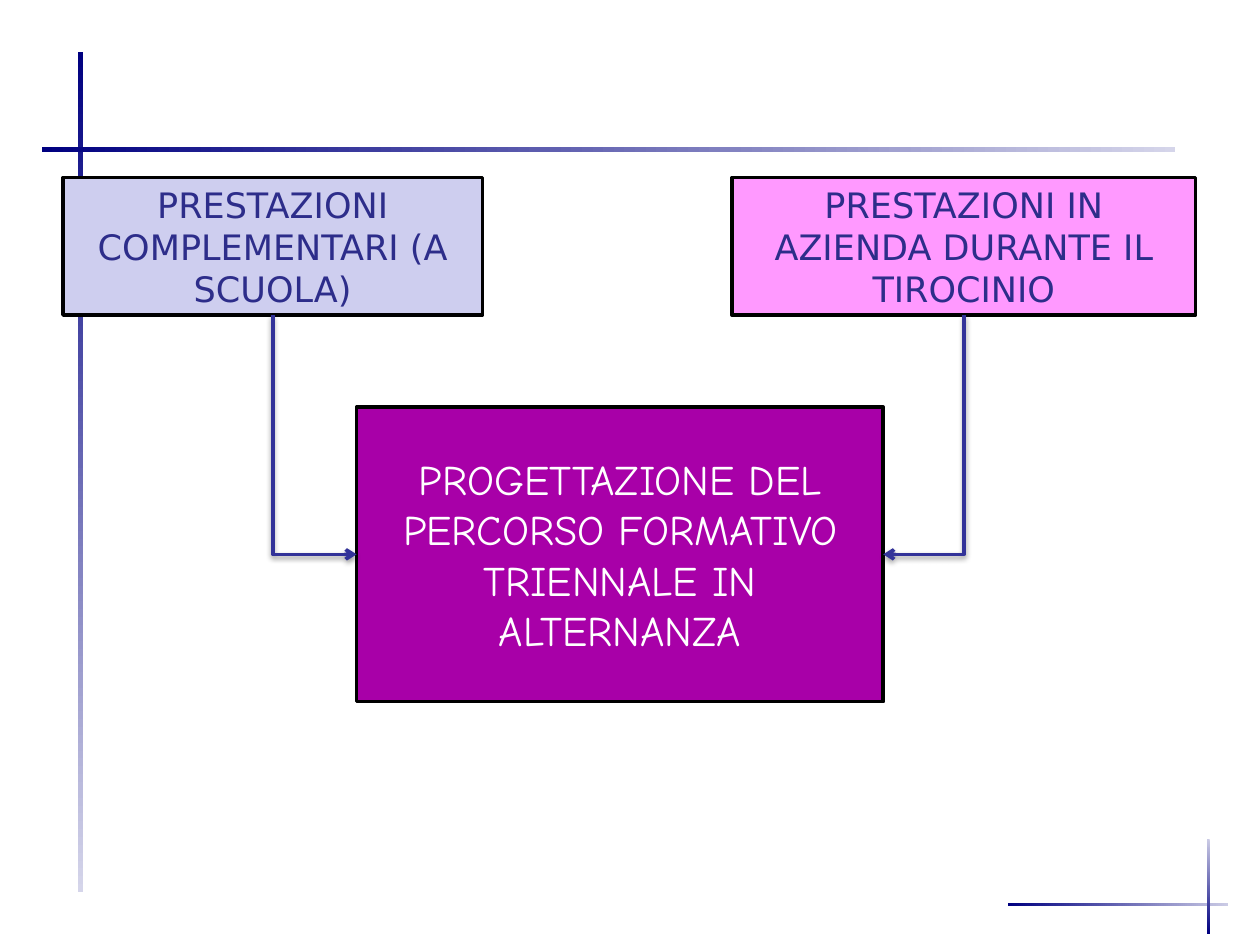
from dataclasses import dataclass

from lxml import etree
from pptx import Presentation
from pptx.dml.color import RGBColor
from pptx.enum.shapes import MSO_CONNECTOR, MSO_SHAPE
from pptx.enum.text import MSO_ANCHOR, PP_ALIGN
from pptx.oxml import parse_xml
from pptx.oxml.ns import nsdecls, qn
from pptx.util import Inches, Pt

RECTANGLE = MSO_SHAPE.RECTANGLE
ELBOW = MSO_CONNECTOR.ELBOW
MIDDLE = MSO_ANCHOR.MIDDLE
CENTER = PP_ALIGN.CENTER
LEFT_SITE, BOTTOM_SITE, RIGHT_SITE = 1, 2, 3


@dataclass(frozen=True)
class Theme:
    navy: str = "000080"
    mist: str = "D5D5EA"
    haze: str = "CBCBE5"
    pink: str = "FF99FF"
    lavender: str = "CECEEF"
    purple: str = "A800A8"
    indigo: str = "2D2D8A"
    arrow: str = "333399"
    black: str = "000000"
    white: str = "FFFFFF"
    body_font: str = "DejaVu Sans"
    accent_font: str = "Comic Neue"
    body_size: int = 20
    accent_size: int = 24
    line_width: int = 2


class SlideBuilder:
    def __init__(self, slide, theme):
        self.slide = slide
        self.theme = theme

    def rectangle(self, left, top, width, height):
        shape = self.slide.shapes.add_shape(
            RECTANGLE, Inches(left), Inches(top), Inches(width), Inches(height)
        )
        shape.shadow.inherit = False
        return shape

    def gradient_bar(self, left, top, width, height, start, end):
        bar = self.rectangle(left, top, width, height)
        bar.line.fill.background()
        bar.fill.gradient()
        bar.fill.gradient_angle = 270 if height > width else 0
        for stop, color in zip(bar.fill.gradient_stops, (start, end)):
            stop.color.rgb = RGBColor.from_string(color)

    def box(self, left, top, width, height, text, fill, color, font, size):
        box = self.rectangle(left, top, width, height)
        box.fill.solid()
        box.fill.fore_color.rgb = RGBColor.from_string(fill)
        box.line.color.rgb = RGBColor.from_string(self.theme.black)
        box.line.width = Pt(self.theme.line_width)
        frame = box.text_frame
        frame.word_wrap = True
        frame.vertical_anchor = MIDDLE
        paragraph = frame.paragraphs[0]
        paragraph.alignment = CENTER
        run = paragraph.add_run()
        run.text = text
        run.font.name = font
        run.font.size = Pt(size)
        run.font.color.rgb = RGBColor.from_string(color)
        return box

    def elbow_arrow(self, source, target):
        start_x = source.left + source.width // 2
        start_y = source.top + source.height
        from_left = start_x < target.left
        end_x = target.left if from_left else target.left + target.width
        end_y = target.top + target.height // 2
        drop, run = end_y - start_y, abs(end_x - start_x)

        arrow = self.slide.shapes.add_connector(ELBOW, start_x, start_y, end_x, end_y)
        arrow.begin_connect(source, BOTTOM_SITE)
        arrow.end_connect(target, LEFT_SITE if from_left else RIGHT_SITE)
        arrow.left = (start_x + end_x - drop) // 2
        arrow.top = (start_y + end_y - run) // 2
        arrow.width, arrow.height = drop, run

        properties = arrow._element.spPr
        transform = properties.find(qn("a:xfrm"))
        transform.set("rot", str((270 if from_left else 90) * 60000))
        transform.set("flipH", "1" if from_left else "0")
        transform.set("flipV", "0")
        properties.find(qn("a:prstGeom")).set("prst", "bentConnector2")

        arrow.line.color.rgb = RGBColor.from_string(self.theme.arrow)
        arrow.line.width = Pt(self.theme.line_width)
        etree.SubElement(properties.find(qn("a:ln")), qn("a:tailEnd"), type="arrow")
        properties.append(parse_xml(
            f'<a:effectLst {nsdecls("a")}>'
            '<a:outerShdw blurRad="40000" dist="20000" dir="5400000" rotWithShape="0">'
            f'<a:srgbClr val="{self.theme.black}"><a:alpha val="38000"/></a:srgbClr>'
            '</a:outerShdw></a:effectLst>'
        ))


def main():
    theme = Theme()
    presentation = Presentation()
    presentation.slide_width = Inches(10)
    presentation.slide_height = Inches(7.5)
    slide = presentation.slides.add_slide(presentation.slide_layouts[6])
    builder = SlideBuilder(slide, theme)

    builder.gradient_bar(0.62, 0.41, 0.04, 6.67, theme.navy, theme.mist)
    builder.gradient_bar(8, 7.17, 1.75, 0.02, theme.navy, theme.haze)
    builder.gradient_bar(9.58, 6.66, 0.02, 0.75, theme.haze, theme.navy)
    builder.gradient_bar(0.33, 1.17, 9, 0.04, theme.navy, theme.mist)

    body_style = (theme.indigo, theme.body_font, theme.body_size)
    company = builder.box(
        5.81, 1.41, 3.68, 1.09,
        "PRESTAZIONI IN AZIENDA DURANTE IL TIROCINIO", theme.pink, *body_style,
    )
    school = builder.box(
        0.5, 1.41, 3.33, 1.09,
        "PRESTAZIONI COMPLEMENTARI (A SCUOLA)", theme.lavender, *body_style,
    )
    planning = builder.box(
        2.83, 3.23, 4.18, 2.34,
        "PROGETTAZIONE DEL PERCORSO FORMATIVO TRIENNALE IN ALTERNANZA",
        theme.purple, theme.white, theme.accent_font, theme.accent_size,
    )
    for source in (school, company):
        builder.elbow_arrow(source, planning)

    presentation.save("out.pptx")


if __name__ == "__main__":
    main()
